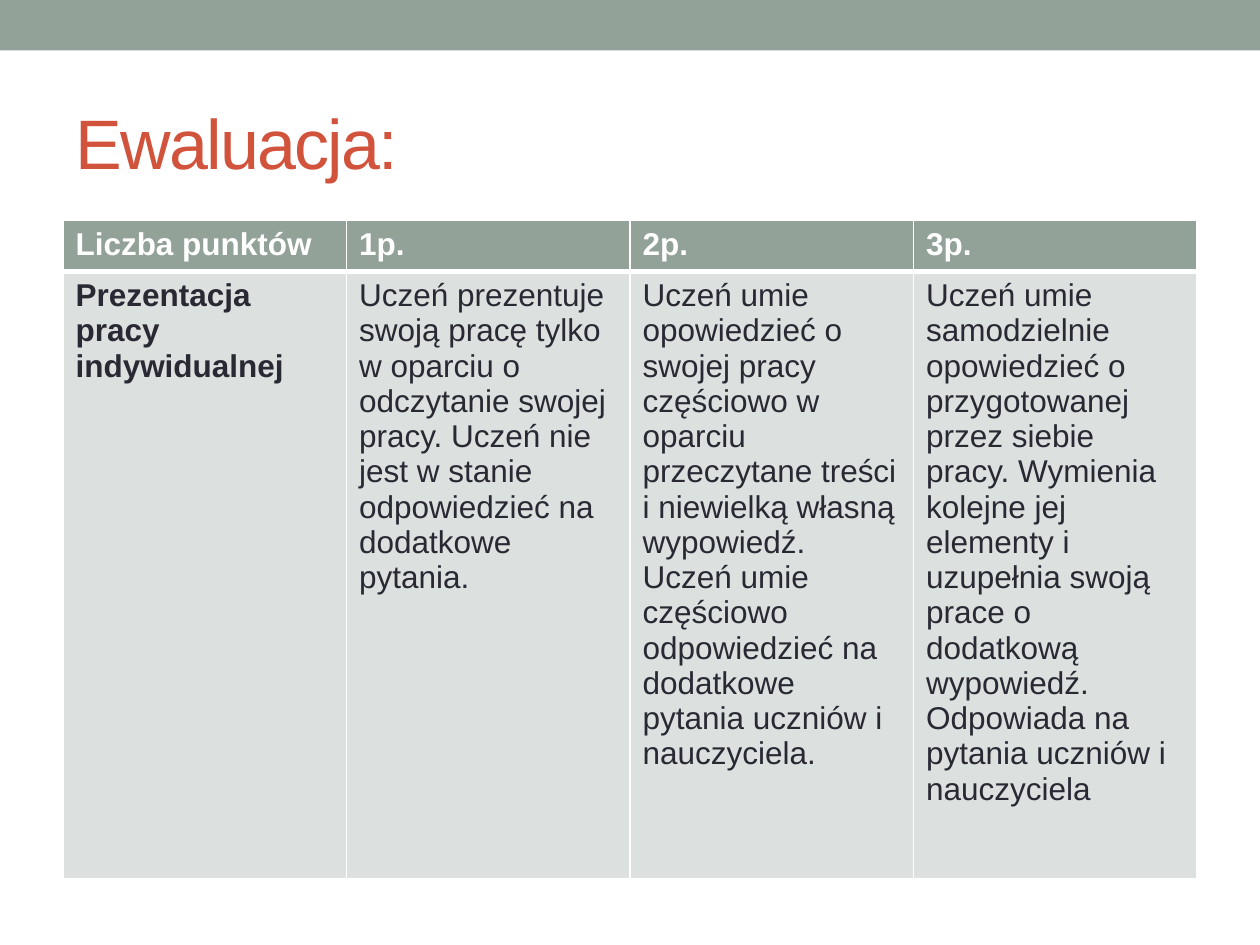
from lxml.etree import SubElement
from pptx import Presentation
from pptx.dml.color import RGBColor
from pptx.enum.shapes import MSO_SHAPE
from pptx.enum.text import MSO_ANCHOR, MSO_AUTO_SIZE, PP_ALIGN
from pptx.oxml.ns import qn
from pptx.util import Pt

SAGE, PALE, WHITE, INK, RUST = "93A299", "DCE0DE", "FFFFFF", "292934", "D2533C"

HEADER = ["Liczba punktów", "1p.", "2p.", "3p."]
CRITERIA = [
    "Prezentacja pracy indywidualnej",
    "Uczeń prezentuje swoją pracę tylko w oparciu o odczytanie swojej pracy. "
    "Uczeń nie jest w stanie odpowiedzieć na dodatkowe pytania.",
    "Uczeń umie opowiedzieć o swojej pracy częściowo w oparciu przeczytane "
    "treści i niewielką własną wypowiedź. Uczeń umie częściowo odpowiedzieć "
    "na dodatkowe pytania uczniów i nauczyciela.",
    "Uczeń umie samodzielnie opowiedzieć o przygotowanej przez siebie pracy. "
    "Wymienia kolejne jej elementy i uzupełnia swoją prace o dodatkową "
    "wypowiedź. Odpowiada na pytania uczniów i nauczyciela",
]


def paint(fmt, color):
    fmt.solid()
    fmt.fore_color.rgb = RGBColor.from_string(color)


def write(tf, text, size=18, color=INK, bold=False, spacing=None):
    p = tf.paragraphs[0]
    p.alignment = PP_ALIGN.LEFT
    r = p.add_run()
    r.text = text
    r.font.name, r.font.size, r.font.bold = "Arial", Pt(size), bold
    paint(r.font.fill, color)
    if spacing is not None:
        r.font._element.set("spc", str(spacing * 100))


def add_band(slide, width, height):
    sp = slide.shapes.add_shape(MSO_SHAPE.RECTANGLE, 0, 0, width, height)
    sp.shadow.inherit = False
    paint(sp.fill, SAGE)
    sp.line.fill.background()


def set_title(slide, text):
    sp = slide.shapes.title
    sp.left, sp.top, sp.width, sp.height = Pt(36), Pt(42), Pt(648), Pt(78)
    tf = sp.text_frame
    tf.auto_size = MSO_AUTO_SIZE.NONE
    tf.vertical_anchor = MSO_ANCHOR.MIDDLE
    write(tf, text, size=40, color=RUST, spacing=-1)


def set_borders(cell, **widths):
    # Border lines must come before the fill in the cell properties
    tcPr = cell._tc.get_or_add_tcPr()
    for i, side in enumerate("LRTB"):
        ln = SubElement(tcPr, qn(f"a:ln{side}"), w=str(Pt(widths.get(side, 1))))
        fill = SubElement(ln, qn("a:solidFill"))
        SubElement(fill, qn("a:srgbClr"), val=WHITE)
        tcPr.insert(i, ln)


def add_rubric(slide, rows, heights):
    frame = slide.shapes.add_table(len(rows), len(rows[0]), Pt(36), Pt(126),
                                   Pt(648), Pt(sum(heights)))
    table = frame.table
    for row, height in zip(table.rows, heights):
        row.height = Pt(height)
    for i, texts in enumerate(rows):
        head = i == 0
        for j, text in enumerate(texts):
            cell = table.cell(i, j)
            paint(cell.fill, SAGE if head else PALE)
            # A thick rule parts the header from the body
            set_borders(cell, **({"B": 3} if head else {"T": 3}))
            write(cell.text_frame, text, color=WHITE if head else INK,
                  bold=head or j == 0)


def main():
    prs = Presentation()
    prs.slide_width, prs.slide_height = Pt(720), Pt(540)
    slide = prs.slides.add_slide(prs.slide_layouts[5])

    # Top band and title
    add_band(slide, prs.slide_width, Pt(28.8))
    set_title(slide, "Ewaluacja:")

    # Scoring table
    add_rubric(slide, [HEADER, CRITERIA], [29.2, 347])

    prs.save("out.pptx")


if __name__ == "__main__":
    main()
